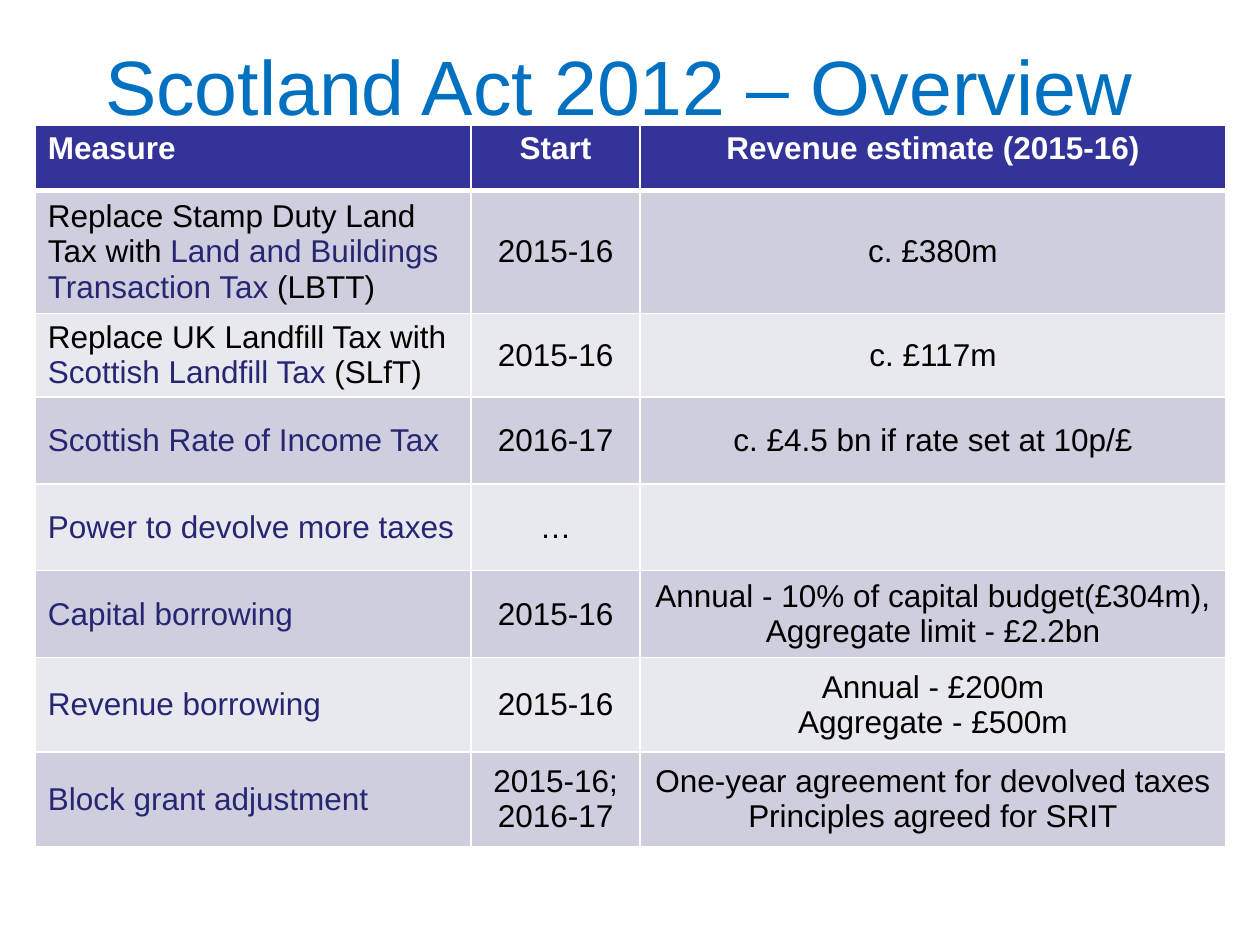
from dataclasses import dataclass
from typing import Any

from lxml import etree
from pptx import Presentation
from pptx import util as u
from pptx.dml import color
from pptx.enum import text
from pptx.oxml import ns

WIDTH, HEIGHT = 10, 7.5
INK, ACCENT, WHITE = "000000", "262673", "FFFFFF"
HEADER_FILL, BANDS = "333399", ("CECEDE", "E8E8EF")
COLUMNS = [3.46, 1.34, 4.65]
ROWS = [0.52, 0.98, 0.52, 0.69, 0.69, 0.69, 0.75, 0.75]
HEADINGS = ["Measure", "Start", "Revenue estimate (2015-16)"]
MEASURES = [
    ([("Replace Stamp Duty Land Tax with ", INK),
      ("Land and Buildings Transaction Tax ", ACCENT), ("(LBTT)", INK)],
     "2015-16", "c. £380m"),
    ([("Replace UK Landfill Tax with ", INK),
      ("Scottish Landfill Tax ", ACCENT), ("(SLfT)", INK)],
     "2015-16", "c. £117m"),
    ([("Scottish Rate of Income Tax", ACCENT)], "2016-17",
     "c. £4.5 bn if rate set at 10p/£"),
    ([("Power to devolve more taxes", ACCENT)], "…", ""),
    ([("Capital borrowing", ACCENT)], "2015-16",
     "Annual - 10% of capital budget(£304m), Aggregate limit - £2.2bn"),
    ([("Revenue borrowing", ACCENT)], "2015-16",
     "Annual - £200m\nAggregate - £500m"),
    ([("Block grant adjustment", ACCENT)], "2015-16; 2016-17",
     "One-year agreement for devolved taxes\nPrinciples agreed for SRIT"),
]


def rgb(value):
    """Turn a hex string into a colour."""
    return color.RGBColor.from_string(value)


@dataclass
class SlideBuilder:
    """Hold the style and the current slide."""

    slide: Any
    font: str = "Arial"
    title_size: int = 44
    table_size: int = 18

    def style(self, font, size, hue, bold=False):
        """Format one font."""
        font.name, font.size, font.bold = self.font, u.Pt(size), bold
        font.color.rgb = rgb(hue)

    def place(self, shape, left, top, width, height):
        """Place a shape by shares of the slide's size."""
        shape.left, shape.width = (u.Inches(WIDTH * share) for share in (left, width))
        shape.top, shape.height = (u.Inches(HEIGHT * share) for share in (top, height))

    def title(self, words, *area):
        """Write the slide title."""
        title = self.slide.shapes.title
        self.place(title, *area)
        frame = title.text_frame
        frame.text = words
        frame.auto_size = text.MSO_AUTO_SIZE.NONE
        frame.vertical_anchor = text.MSO_ANCHOR.MIDDLE
        para = frame.paragraphs[0]
        para.alignment = text.PP_ALIGN.CENTER
        self.style(para.font, self.title_size, "0070C0")

    def borders(self, cell, top, bottom):
        """Draw white borders with the given top and bottom widths."""
        properties = cell._tc.get_or_add_tcPr()
        widths = {"a:lnL": 1, "a:lnR": 1, "a:lnT": top, "a:lnB": bottom}
        for place, (tag, width) in enumerate(widths.items()):
            line = etree.Element(ns.qn(tag), w=str(u.Pt(width)))
            fill = etree.SubElement(line, ns.qn("a:solidFill"))
            etree.SubElement(fill, ns.qn("a:srgbClr"), val=WHITE)
            properties.insert(place, line)

    def cell(self, cell, content, fill, hue, centred, bold=False):
        """Fill one cell with plain lines or with coloured spans."""
        cell.fill.solid()
        cell.fill.fore_color.rgb = rgb(fill)
        cell.vertical_anchor = text.MSO_ANCHOR.TOP if bold else text.MSO_ANCHOR.MIDDLE
        if isinstance(content, str):
            cell.text_frame.text = content
        else:
            for words, span_hue in content:
                span = cell.text_frame.paragraphs[0].add_run()
                span.text = words
                span.font.color.rgb = rgb(span_hue)
        for para in cell.text_frame.paragraphs:
            para.alignment = text.PP_ALIGN.CENTER if centred else text.PP_ALIGN.LEFT
            self.style(para.font, self.table_size, hue, bold)

    def table(self, left, top, headings, records):
        """Draw a banded table below a header row."""
        frame = self.slide.shapes.add_table(
            len(ROWS), len(COLUMNS), u.Inches(WIDTH * left), u.Inches(HEIGHT * top),
            u.Inches(sum(COLUMNS)), u.Inches(sum(ROWS)))
        table = frame.table
        for column, width in zip(table.columns, COLUMNS):
            column.width = u.Inches(width)
        for row, height in zip(table.rows, ROWS):
            row.height = u.Inches(height)
        for r, record in enumerate([headings, *records]):
            header = r == 0
            fill = HEADER_FILL if header else BANDS[(r - 1) % 2]
            for c, content in enumerate(record):
                cell = table.cell(r, c)
                self.cell(cell, content, fill, WHITE if header else INK, c > 0, header)
                self.borders(cell, 3 if r == 1 else 1, 3 if header else 1)


def main():
    """Build and save the deck."""
    deck = Presentation()
    deck.slide_width, deck.slide_height = u.Inches(WIDTH), u.Inches(HEIGHT)
    page = SlideBuilder(deck.slides.add_slide(deck.slide_layouts[5]))
    page.title("Scotland Act 2012 – Overview ", 0.05, 0.03, 0.9, 0.12)
    page.table(0.028, 0.132, HEADINGS, MEASURES)
    deck.save("out.pptx")


if __name__ == "__main__":
    main()
